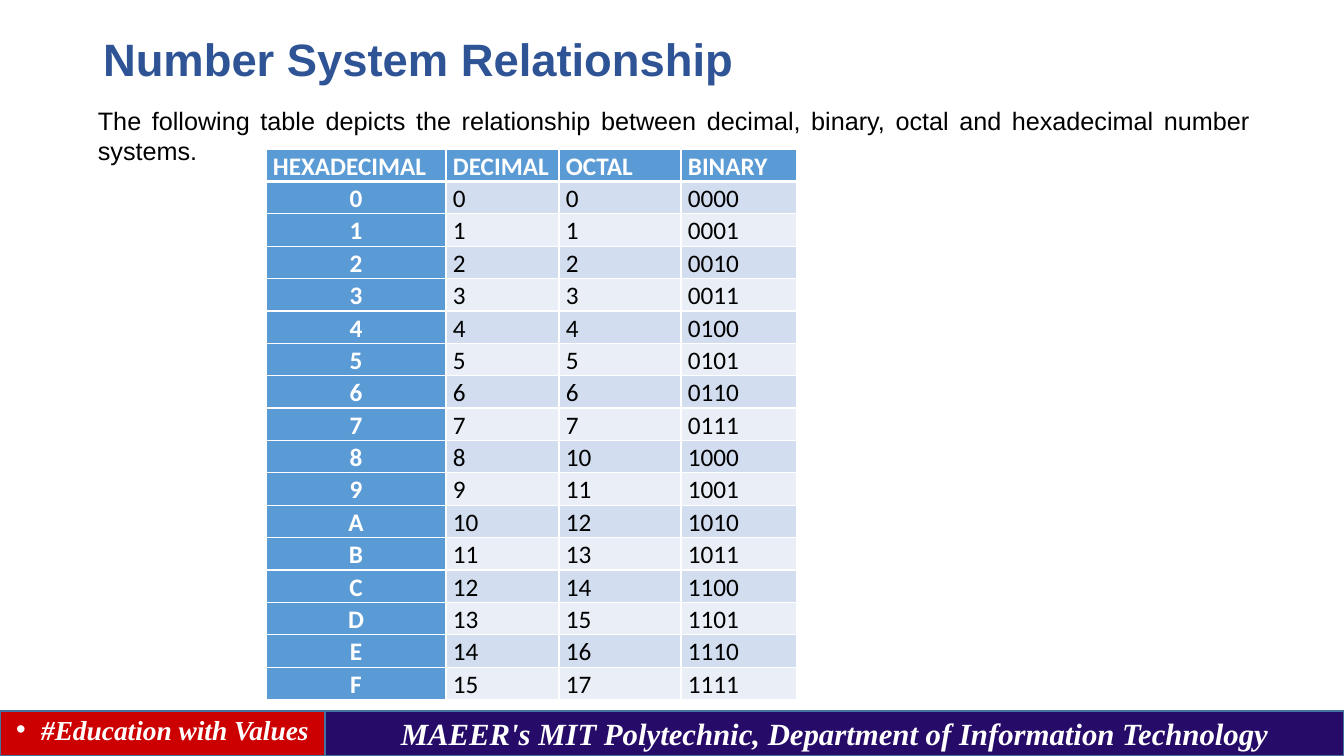
from dataclasses import dataclass

from lxml.etree import SubElement
from pptx import Presentation
from pptx.dml.color import RGBColor
from pptx.enum.shapes import MSO_SHAPE as Preset
from pptx.enum.text import MSO_ANCHOR as Anchor, MSO_AUTO_SIZE as AutoSize, PP_ALIGN as Align
from pptx.oxml import parse_xml
from pptx.oxml.ns import nsdecls, qn
from pptx.util import Pt

TITLE = "Number System Relationship"
INTRO = (
    "The following table depicts the relationship between decimal, "
    "binary, octal and hexadecimal number systems."
)
HEADINGS = ["HEXADECIMAL", "DECIMAL", "OCTAL", "BINARY"]
NUMBERS = [(f"{n:X}", f"{n}", f"{n:o}", f"{n:04b}") for n in range(16)]
MOTTO = "#Education with Values"
DEPARTMENT = "MAEER's MIT Polytechnic, Department of Information Technology"

SLIDE_WIDTH, SLIDE_HEIGHT = 1344, 756
TITLE_BOX = (93, 40, 1159, 43)
INTRO_BOX = (85, 100, 1175, 105)
TABLE_LEFT, TABLE_TOP, ROW_HEIGHT = 266, 149, 31
COLUMN_WIDTHS = [180, 113, 122, 116]
FOOTER_TOP, MOTTO_WIDTH = 711, 325
BULLET_INDENT, INTRO_INDENT, CELL_MARGIN = 25, 3, 7


@dataclass(frozen=True)
class Theme:
    title: str = "2F5496"
    text: str = "000000"
    white: str = "FFFFFF"
    header: str = "5B9BD5"
    bands: tuple = ("D2DEEF", "EAEFF7")
    motto: str = "CC0000"
    department: str = "260B69"
    outline: str = "43739E"
    sans: str = "Arial"
    table_font: str = "Calibri"
    serif: str = "Times New Roman"
    title_size: float = 32.4
    body_size: float = 18
    motto_size: float = 19.6
    department_size: float = 22


THEME = Theme()


def px(value):
    return round(value * 914400 / 100.8)


def color(value):
    return RGBColor.from_string(value)


def write(frame, text, font, size, ink, align, bold=False, italic=False, spacing=1.0):
    paragraph = frame.paragraphs[0]
    paragraph.alignment = align
    paragraph.line_spacing = spacing
    run = paragraph.add_run()
    run.text = text
    run.font.name = font
    run.font.size = Pt(size)
    run.font.bold = bold
    run.font.italic = italic
    run.font.color.rgb = color(ink)
    return paragraph


def add_title(slide):
    title = slide.shapes.title
    title.left, title.top, title.width, title.height = map(px, TITLE_BOX)
    frame = title.text_frame
    frame.auto_size = AutoSize.NONE
    frame.vertical_anchor = Anchor.MIDDLE
    write(frame, TITLE, THEME.sans, THEME.title_size, THEME.title,
          Align.LEFT, bold=True, spacing=0.9)


def add_intro(slide):
    frame = slide.shapes.add_textbox(*map(px, INTRO_BOX)).text_frame
    frame.word_wrap = True
    frame.vertical_anchor = Anchor.TOP
    paragraph = write(frame, INTRO, THEME.sans, THEME.body_size, THEME.text, Align.JUSTIFY)
    paragraph._p.get_or_add_pPr().set("marL", str(px(INTRO_INDENT)))


def set_borders(cell, bottom_width):
    properties = cell._tc.get_or_add_tcPr()
    widths = {"lnL": 1, "lnR": 1, "lnT": 1, "lnB": bottom_width}
    for position, (edge, width) in enumerate(widths.items()):
        properties.insert(position, parse_xml(
            f'<a:{edge} {nsdecls("a")} w="{Pt(width)}"><a:solidFill>'
            f'<a:srgbClr val="{THEME.white}"/></a:solidFill></a:{edge}>'))


def add_number_table(slide):
    rows = [HEADINGS, *NUMBERS]
    table = slide.shapes.add_table(
        len(rows), len(HEADINGS), px(TABLE_LEFT), px(TABLE_TOP),
        px(sum(COLUMN_WIDTHS)), px(ROW_HEIGHT * len(rows))).table
    for column, width in zip(table.columns, COLUMN_WIDTHS):
        column.width = px(width)
    for row_index, values in enumerate(rows):
        table.rows[row_index].height = px(ROW_HEIGHT)
        for column_index, value in enumerate(values):
            cell = table.cell(row_index, column_index)
            is_heading = row_index == 0
            is_accent = is_heading or column_index == 0
            cell.margin_left = cell.margin_right = px(CELL_MARGIN)
            cell.margin_top = cell.margin_bottom = 0
            cell.fill.solid()
            cell.fill.fore_color.rgb = color(
                THEME.header if is_accent else THEME.bands[(row_index - 1) % 2])
            set_borders(cell, 3 if is_heading else 1)
            write(cell.text_frame, value, THEME.table_font, THEME.body_size,
                  THEME.white if is_accent else THEME.text,
                  Align.CENTER if is_accent and not is_heading else Align.JUSTIFY,
                  bold=is_accent, spacing=1.07)


def add_footer_bar(slide, left, width, fill, text, size, spacing):
    bar = slide.shapes.add_shape(
        Preset.RECTANGLE, px(left), px(FOOTER_TOP), px(width), px(SLIDE_HEIGHT - FOOTER_TOP))
    bar.shadow.inherit = False
    bar.fill.solid()
    bar.fill.fore_color.rgb = color(fill)
    bar.line.color.rgb = color(THEME.outline)
    bar.line.width = Pt(1)
    frame = bar.text_frame
    frame.word_wrap = True
    frame.vertical_anchor = Anchor.MIDDLE
    return write(frame, text, THEME.serif, size, THEME.white, Align.CENTER,
                 bold=True, italic=True, spacing=spacing)


def add_bullet(paragraph):
    properties = paragraph._p.get_or_add_pPr()
    properties.set("marL", str(px(BULLET_INDENT)))
    properties.set("indent", str(-px(BULLET_INDENT)))
    SubElement(properties, qn("a:buFont"), typeface=THEME.sans)
    SubElement(properties, qn("a:buChar"), char="•")


def main():
    presentation = Presentation()
    presentation.slide_width = px(SLIDE_WIDTH)
    presentation.slide_height = px(SLIDE_HEIGHT)
    slide = presentation.slides.add_slide(presentation.slide_layouts[5])
    motto = add_footer_bar(slide, 0, MOTTO_WIDTH, THEME.motto, MOTTO, THEME.motto_size, 0.7)
    add_bullet(motto)
    add_footer_bar(slide, MOTTO_WIDTH, SLIDE_WIDTH - MOTTO_WIDTH, THEME.department,
                   DEPARTMENT, THEME.department_size, 1.0)
    add_title(slide)
    add_intro(slide)
    add_number_table(slide)
    presentation.save("out.pptx")


if __name__ == "__main__":
    main()
